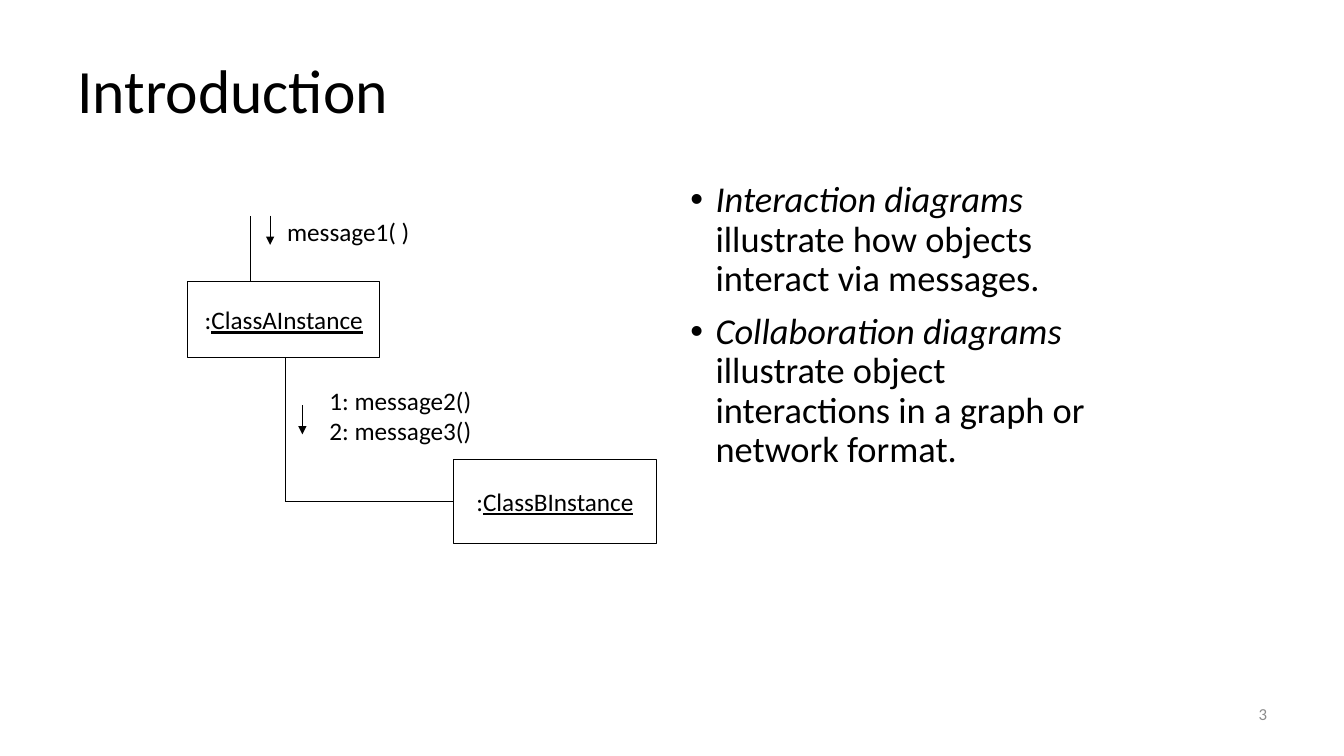
import pptx
import pptx.util
import pptx.dml.color
import pptx.enum.shapes
import pptx.enum.text
import pptx.oxml

Pt = pptx.util.Pt
RGBColor = pptx.dml.color.RGBColor
ALIGN = pptx.enum.text.PP_ALIGN
ANCHOR = pptx.enum.text.MSO_ANCHOR

BLACK = RGBColor(0x00, 0x00, 0x00)
WHITE = RGBColor(0xFF, 0xFF, 0xFF)
GREY = RGBColor(0x8C, 0x8C, 0x8C)
FONT = "Calibri"

# Grid of square cells, ten to the inch
COLS, ROWS = 133.33, 75
CELL = 0.1

# Places shared by the boxes and the links between them
A_BOX = (18.6, 27.9, 19.1, 7.6)
B_BOX = (45, 45.6, 20.1, 8.3)
A_BOTTOM = A_BOX[1] + A_BOX[3]
B_MIDDLE = B_BOX[1] + B_BOX[3] / 2
IN_X, IN_TOP = 24.9, 21.4
LINK_X = 28.3
ARROW_LENGTH = 2.9


def cells(*counts):
    return [pptx.util.Inches(n * CELL) for n in counts]


def apply(obj, values):
    for name, value in values.items():
        setattr(obj, name, value)


def write(sp, paragraphs, size, color=BLACK, frame=None, para=None):
    """Fill a shape; each paragraph is a list of (text, font values) runs."""
    tf = sp.text_frame
    apply(tf, {"word_wrap": True, **(frame or {})})
    for i, runs in enumerate(paragraphs):
        p = tf.add_paragraph() if i else tf.paragraphs[0]
        apply(p, para or {})
        for text, style in runs:
            r = p.add_run()
            r.text = text
            apply(r.font, {"name": FONT, "size": Pt(size), **style})
            r.font.color.rgb = color
    return tf


def add_text(slide, place, paragraphs, size, **formats):
    sp = slide.shapes.add_textbox(*cells(*place))
    return write(sp, paragraphs, size, **formats)


def add_label(slide, place, *lines):
    add_text(slide, place, [[(line, {})] for line in lines], 18,
             frame={"word_wrap": False,
                    "auto_size": pptx.enum.text.MSO_AUTO_SIZE.SHAPE_TO_FIT_TEXT})


def add_instance(slide, place, name):
    sp = slide.shapes.add_shape(
        pptx.enum.shapes.MSO_SHAPE.RECTANGLE, *cells(*place))
    sp.shadow.inherit = False
    sp.fill.solid()
    sp.fill.fore_color.rgb = WHITE
    sp.line.color.rgb = BLACK
    sp.line.width = Pt(0.75)
    write(sp, [[(":", {}), (name, {"underline": True})]], 18,
          frame={"word_wrap": False, "vertical_anchor": ANCHOR.MIDDLE},
          para={"alignment": ALIGN.CENTER})


def add_line(slide, start, end, arrow=False):
    sp = slide.shapes.add_connector(
        pptx.enum.shapes.MSO_CONNECTOR.STRAIGHT, *cells(*start, *end))
    sp.line.color.rgb = BLACK
    sp.line.width = Pt(0.75)
    if arrow:
        head = pptx.oxml.parse_xml(
            '<a:tailEnd xmlns:a="http://schemas.openxmlformats.org/'
            'drawingml/2006/main" type="triangle"/>')
        sp.line._get_or_add_ln().append(head)
    sp._element.spPr.append(pptx.oxml.parse_xml(
        '<a:effectLst xmlns:a="http://schemas.openxmlformats.org/'
        'drawingml/2006/main"/>'))


def add_message_arrow(slide, x, top):
    add_line(slide, (x, top), (x, top + ARROW_LENGTH), arrow=True)


def add_bullets(slide, place, items):
    tf = add_text(
        slide, place,
        [[(term, {"italic": True}), (rest, {})] for term, rest in items],
        26, para={"line_spacing": 0.9, "space_before": Pt(10)})
    indent = pptx.util.Inches(0.25)
    for p in tf.paragraphs:
        pPr = p._p.get_or_add_pPr()
        pPr.set("marL", str(indent))
        pPr.set("indent", str(-indent))
        for tag, value in (("buFont", 'typeface="Arial"'), ("buChar", 'char="•"')):
            pPr.append(pptx.oxml.parse_xml(
                f'<a:{tag} xmlns:a="http://schemas.openxmlformats.org/'
                f'drawingml/2006/main" {value}/>'))


def main():
    prs = pptx.Presentation()
    prs.slide_width, prs.slide_height = cells(COLS, ROWS)
    slide = prs.slides.add_slide(prs.slide_layouts[6])

    # Title, page number and explanation
    middle = {"vertical_anchor": ANCHOR.MIDDLE}
    add_text(slide, (6.7, 3, 120, 12.5), [[("Introduction", {})]], 44,
             frame=middle, para={"line_spacing": 0.9})
    add_text(slide, (95.6, 68.3, 31.1, 5), [[("3", {})]], 12, color=GREY,
             frame=middle, para={"alignment": ALIGN.RIGHT})
    add_bullets(slide, (67.5, 17.5, 44.1, 49.5), [
        ("Interaction diagrams",
         " illustrate how objects interact via messages."),
        ("Collaboration diagrams",
         " illustrate object interactions in a graph or network format."),
    ])

    # Instances
    add_instance(slide, A_BOX, "ClassAInstance")
    add_instance(slide, B_BOX, "ClassBInstance")

    # Links
    add_line(slide, (IN_X, A_BOX[1]), (IN_X, IN_TOP))
    add_line(slide, (LINK_X, A_BOTTOM), (LINK_X, B_MIDDLE))
    add_line(slide, (LINK_X, B_MIDDLE), (B_BOX[0], B_MIDDLE))

    # Messages
    add_message_arrow(slide, 26.8, IN_TOP)
    add_label(slide, (27.5, 21, 14.3, 4), "message1( )")
    add_message_arrow(slide, 30, 40.2)
    add_label(slide, (31.7, 37.7, 16.3, 7.1), "1: message2()", "2: message3()")

    prs.save("out.pptx")


if __name__ == "__main__":
    main()
